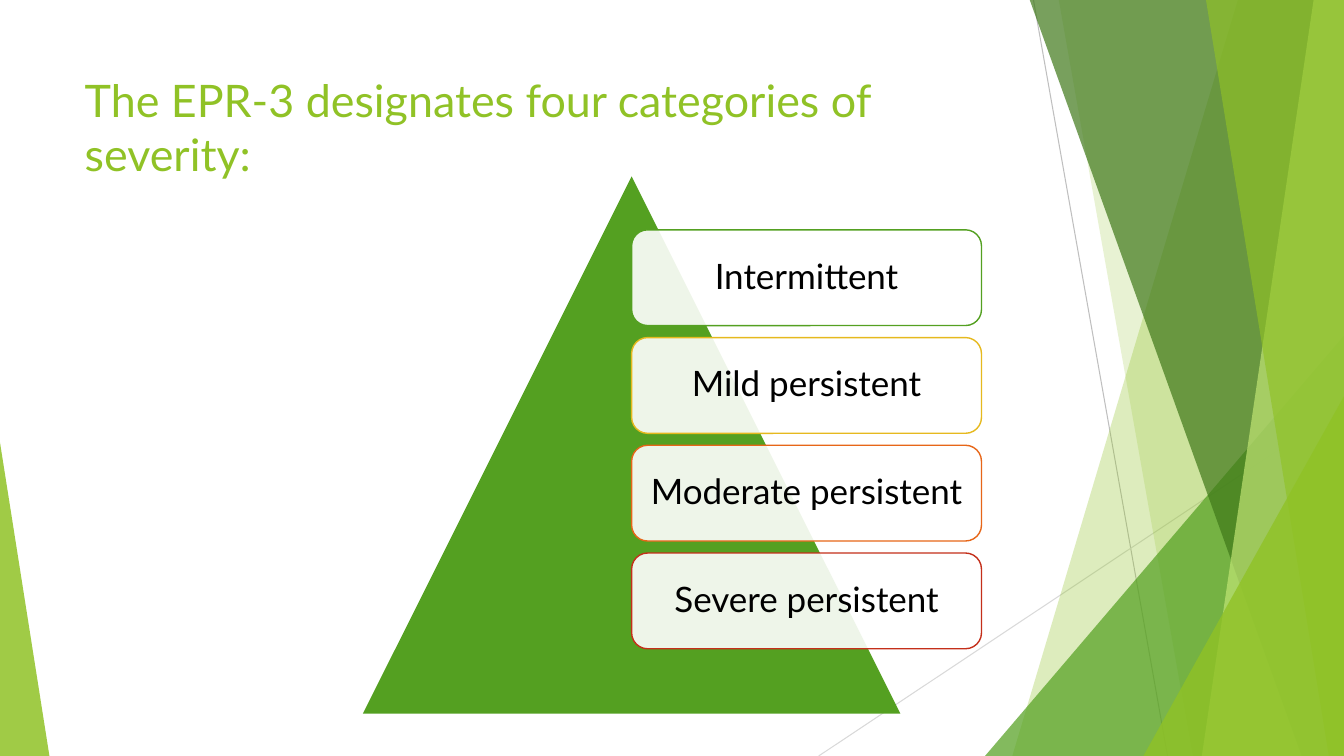
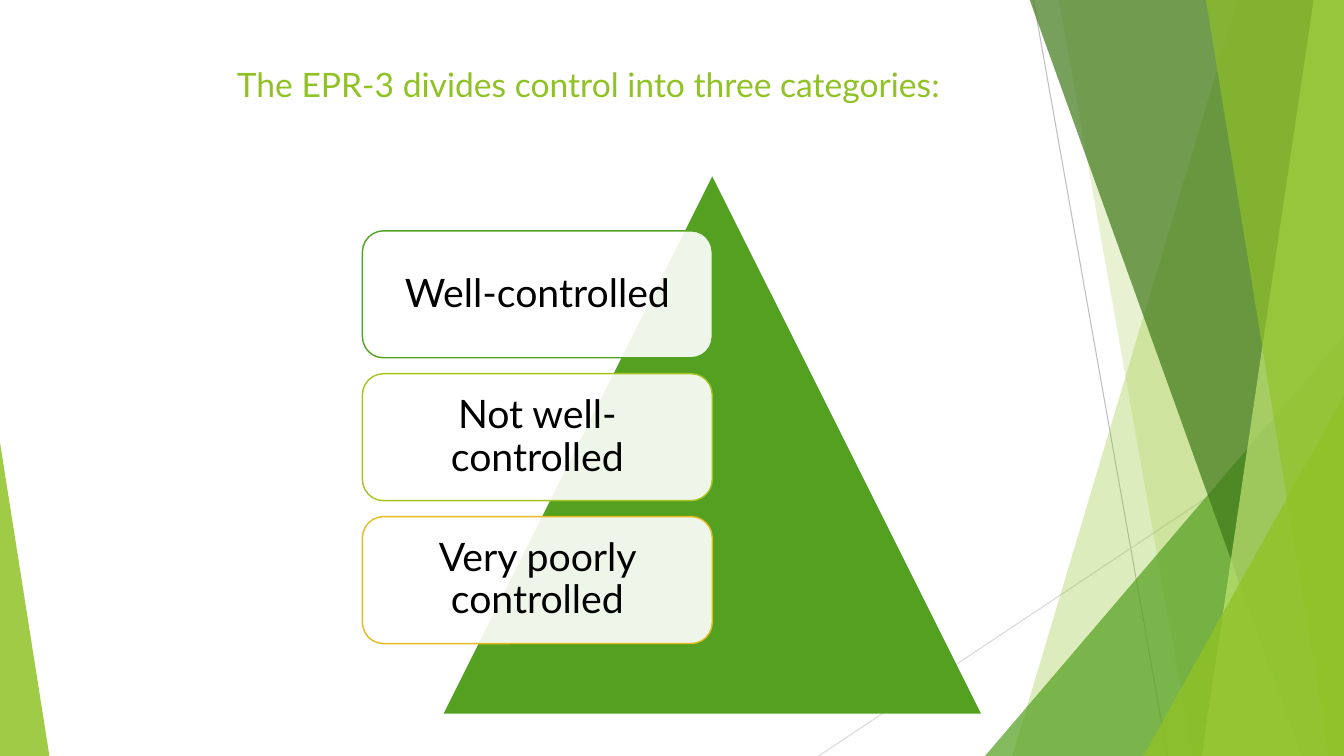
"""Build two slides on asthma severity and control categories."""
import pptx
import pptx.dml.color
import pptx.enum.shapes
import pptx.enum.text
import pptx.oxml.ns
import pptx.util
from lxml import etree

Inches = pptx.util.Inches
Pt = pptx.util.Pt
SHAPE = pptx.enum.shapes.MSO_SHAPE
ALIGN = pptx.enum.text.PP_ALIGN
ANCHOR = pptx.enum.text.MSO_ANCHOR
qn = pptx.oxml.ns.qn

FONT = "Lato"
WIDTH, HEIGHT, BLEED = 13.33, 7.5, -0.01
COLORS = {
    "lime": "90C226", "green": "54A021", "forest": "3F7819", "pale": "C0E474",
    "olive": "A5C41F", "gold": "E6B91E", "orange": "E76618", "red": "C42F1A",
    "gray": "BFBFBF", "silver": "D9D9D9", "white": "FFFFFF", "black": "000000",
}

RULES = [
    ((10.25, 0), (11.58, HEIGHT), "gray"),
    ((WIDTH, 4.03), (8.12, HEIGHT), "silver"),
]
FACETS = [
    {"band": (12.28, 10.04), "color": "lime", "alpha": 30},
    {"band": (10.5, 11.83), "color": "lime", "alpha": 20},
    {"wedge": (9.77, 3.33, 3.56), "tip": 1, "color": "green", "alpha": 72},
    {"band": (10.21, 12.91), "color": "forest", "alpha": 70},
    {"band": (13.03, 11.92), "color": "pale", "alpha": 70},
    {"band": (11.96, 13.18), "color": "lime", "alpha": 65},
    {"wedge": (11.34, 3.93, 1.99), "tip": 1, "color": "lime", "alpha": 80},
    {"wedge": (0, 4.39, 0.49), "tip": 0, "color": "lime", "alpha": 85},
]

PYRAMID_TOP, PYRAMID_SIDE, CARD_WIDTH = 1.75, 5.33, 3.47
SLIDES = [
    {
        "title": "The EPR-3 designates four categories of severity:",
        "title_box": (0.74, 0.67, 9.4, 1.44), "title_size": 32,
        "pyramid_left": 3.6, "cards_on_right": True,
        "cards_top": 2.28, "card_height": 0.95, "card_size": 25, "inset": 0.1,
        "cards": [
            ("Intermittent", "green"),
            ("Mild persistent", "gold"),
            ("Moderate persistent", "orange"),
            ("Severe persistent", "red"),
        ],
    },
    {
        "title": "The EPR-3 divides control into three categories:",
        "title_box": (2.25, 0.58, 9, 1.08), "title_size": 24,
        "pyramid_left": 4.4, "cards_on_right": False,
        "cards_top": 2.29, "card_height": 1.26, "card_size": 28, "inset": 0.12,
        "cards": [
            ("Well-controlled", "green"),
            ("Not well-controlled", "olive"),
            ("Very poorly controlled", "gold"),
        ],
    },
]


def rgb(name):
    return pptx.dml.color.RGBColor.from_string(COLORS[name])


def paint(shape, color, alpha=100, outline=None):
    shape.shadow.inherit = False
    shape.fill.solid()
    shape.fill.fore_color.rgb = rgb(color)
    if alpha < 100:
        fill_color = shape.element.spPr.find(qn("a:solidFill")).find(qn("a:srgbClr"))
        etree.SubElement(fill_color, qn("a:alpha")).set("val", str(alpha * 1000))
    if outline:
        shape.line.color.rgb = rgb(outline)
        shape.line.width = Pt(1)
    else:
        shape.line.fill.background()


def add_shape(page, preset, *bounds):
    return page.shapes.add_shape(preset, *map(Inches, bounds))


def write(frame, text, size, color, align):
    para = frame.paragraphs[0]
    para.alignment = align
    span = para.add_run()
    span.text = text
    span.font.name = FONT
    span.font.size = Pt(size)
    span.font.color.rgb = rgb(color)
    return para


def add_facet(page, facet):
    if "band" in facet:
        top, bottom = facet["band"]
        corners = [(WIDTH, BLEED), (WIDTH, HEIGHT), (bottom, HEIGHT)]
        outline = page.shapes.build_freeform(Inches(top), Inches(BLEED))
        outline.add_line_segments([(Inches(x), Inches(y)) for x, y in corners])
        shape = outline.convert_to_shape()
    else:
        left, top, width = facet["wedge"]
        shape = add_shape(page, SHAPE.ISOSCELES_TRIANGLE, left, top, width, HEIGHT - top)
        shape.adjustments[0] = facet["tip"]
    paint(shape, facet["color"], facet["alpha"])
    return shape


def add_rule(page, start, end, color):
    rule = page.shapes.add_connector(
        pptx.enum.shapes.MSO_CONNECTOR.STRAIGHT, *map(Inches, start + end))
    rule.line.color.rgb = rgb(color)
    rule.line.width = Pt(0.75)
    etree.SubElement(rule.element.spPr, qn("a:effectLst"))
    return rule


def decorate(layout, page):
    """Draw the shared backdrop and move it behind everything on the layout."""
    backdrop = [add_rule(page, *rule) for rule in RULES]
    backdrop += [add_facet(page, facet) for facet in FACETS]
    for position, shape in enumerate(backdrop, start=2):
        layout.shapes.element.insert(position, shape.element)


def add_title(page, content):
    title = page.shapes.title
    title.left, title.top, title.width, title.height = map(Inches, content["title_box"])
    frame = title.text_frame
    frame.auto_size = pptx.enum.text.MSO_AUTO_SIZE.NONE
    frame.vertical_anchor = ANCHOR.TOP
    write(frame, content["title"], content["title_size"], "lime", ALIGN.LEFT)


def add_pyramid(page, content):
    left = content["pyramid_left"]
    pyramid = add_shape(page, SHAPE.ISOSCELES_TRIANGLE,
                        left, PYRAMID_TOP, PYRAMID_SIDE, PYRAMID_SIDE)
    paint(pyramid, "green")
    middle = left + PYRAMID_SIDE / 2
    card_left = middle if content["cards_on_right"] else middle - CARD_WIDTH
    height = content["card_height"]
    pitch = height * 9 / 8
    for index, (text, outline) in enumerate(content["cards"]):
        top = content["cards_top"] + index * pitch
        card = add_shape(page, SHAPE.ROUNDED_RECTANGLE, card_left, top, CARD_WIDTH, height)
        paint(card, "white", 90, outline)
        frame = card.text_frame
        frame.word_wrap = True
        frame.vertical_anchor = ANCHOR.MIDDLE
        inset = Inches(content["inset"])
        frame.margin_left = frame.margin_right = inset
        frame.margin_top = frame.margin_bottom = inset
        para = write(frame, text, content["card_size"], "black", ALIGN.CENTER)
        para.line_spacing = 0.9


def main():
    deck = pptx.Presentation()
    deck.slide_width, deck.slide_height = Inches(WIDTH), Inches(HEIGHT)
    layout = deck.slide_layouts.get_by_name("Title Only")
    pages = [deck.slides.add_slide(layout) for _ in SLIDES]
    decorate(layout, pages[0])
    for page, content in zip(pages, SLIDES):
        add_title(page, content)
        add_pyramid(page, content)
    deck.save("out.pptx")


if __name__ == "__main__":
    main()
